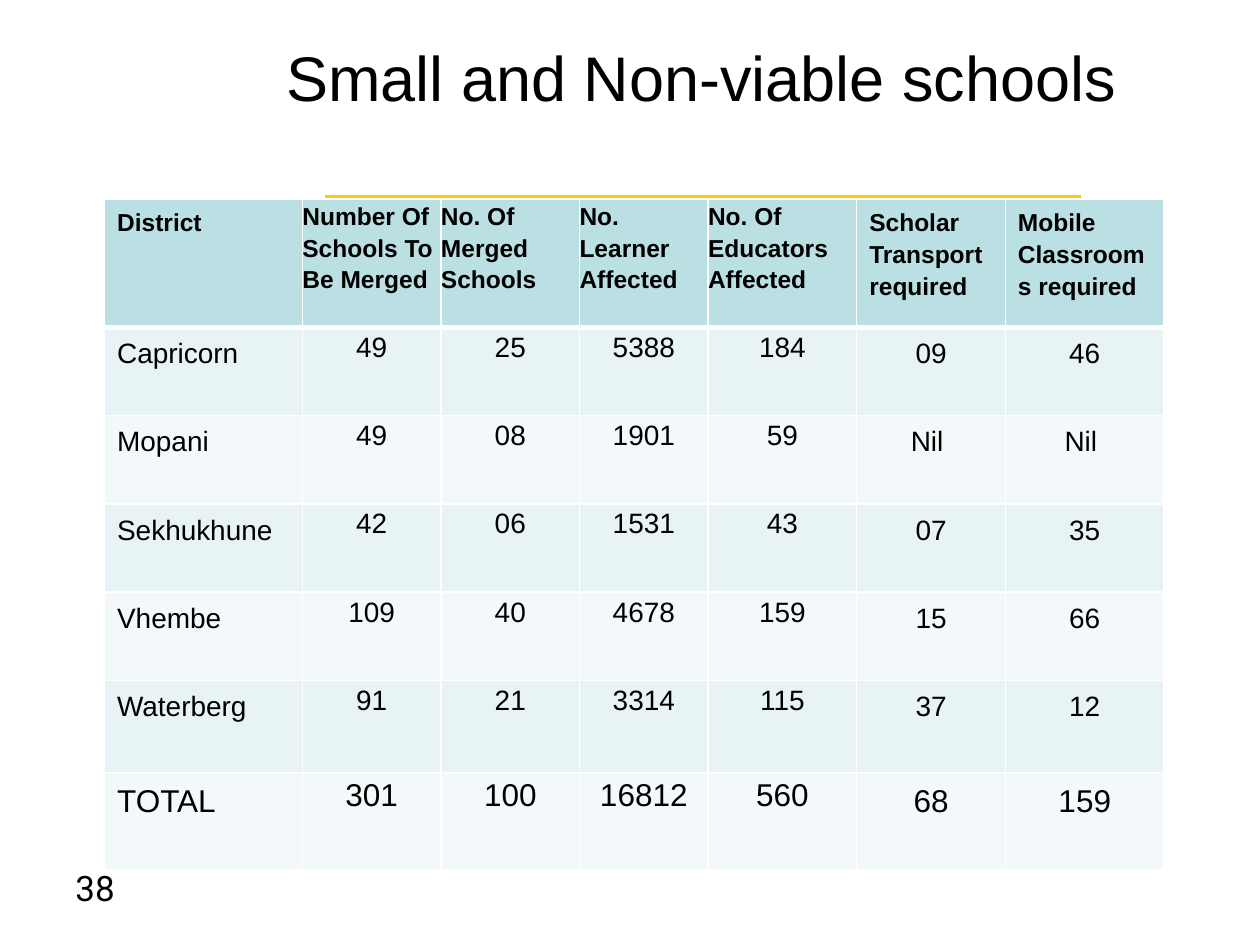
from lxml.etree import SubElement
from pptx import Presentation
from pptx.dml.color import RGBColor
from pptx.enum.shapes import MSO_CONNECTOR
from pptx.enum.text import MSO_ANCHOR, PP_ALIGN
from pptx.oxml.ns import qn
from pptx.util import Inches, Pt

BLACK = RGBColor(0x00, 0x00, 0x00)
WHITE = RGBColor(0xFF, 0xFF, 0xFF)
GOLD = RGBColor(0xFF, 0xCC, 0x00)
HEADER_TEAL = RGBColor(0xBB, 0xE0, 0xE3)
BAND_FILLS = (RGBColor(0xE7, 0xF3, 0xF4), RGBColor(0xF3, 0xF9, 0xFA))

COLUMN_WIDTHS = (1.57, 1.1, 1.1, 1.02, 1.18, 1.18, 1.26)
ROW_HEIGHTS = (1.02, 0.7, 0.7, 0.7, 0.7, 0.73, 0.77)
TIGHT_COLUMNS = range(1, 5)
ROWS = (
    ("District", "Number Of Schools To Be Merged", "No. Of Merged Schools",
     "No. Learner Affected", "No. Of Educators Affected",
     "Scholar Transport required", "Mobile\nClassrooms required"),
    ("Capricorn", "49", "25", "5388", "184", "09", "46"),
    ("Mopani", "49", "08", "1901", "59", "Nil ", "Nil "),
    ("Sekhukhune", "42", "06", "1531", "43", "07", "35"),
    ("Vhembe", "109", "40", "4678", "159", "15", "66"),
    ("Waterberg", "91", "21", "3314", "115", "37", "12"),
    ("TOTAL", "301", "100", "16812", "560", "68", "159"),
)


def style_font(font, size, name="Arial", bold=False):
    font.name = name
    font.size = Pt(size)
    font.bold = bold
    font.color.rgb = BLACK


def add_text(slide, text, left, top, width, height, size, name, align):
    box = slide.shapes.add_textbox(
        Inches(left), Inches(top), Inches(width), Inches(height))
    frame = box.text_frame
    frame.word_wrap = True
    frame.text = text
    para = frame.paragraphs[0]
    para.alignment = align
    style_font(para.runs[0].font, size, name)
    return box


def add_rule(slide, left, right, top):
    rule = slide.shapes.add_connector(
        MSO_CONNECTOR.STRAIGHT, Inches(left), Inches(top), Inches(right), Inches(top))
    rule.line.color.rgb = GOLD
    rule.line.width = Pt(4.5)
    SubElement(rule.element.spPr, qn("a:effectLst"))


def set_borders(cell, bottom_width, top_width):
    """Draw white borders; call before filling, since the fill must follow them."""
    properties = cell._tc.get_or_add_tcPr()
    widths = {"a:lnL": 1, "a:lnR": 1, "a:lnT": top_width, "a:lnB": bottom_width}
    for tag, width in widths.items():
        line = SubElement(properties, qn(tag), w=str(Pt(width)))
        fill = SubElement(line, qn("a:solidFill"))
        SubElement(fill, qn("a:srgbClr"), val=str(WHITE))


def fill_cell(cell, text, row, column):
    header = row == 0
    set_borders(cell, 3 if header else 1, 3 if row == 1 else 1)
    cell.fill.solid()
    cell.fill.fore_color.rgb = HEADER_TEAL if header else BAND_FILLS[(row - 1) % 2]
    if column in TIGHT_COLUMNS:
        cell.margin_left = cell.margin_right = 0
        cell.margin_top = cell.margin_bottom = 0
    size = 14 if header else 18 if row == len(ROWS) - 1 else 16
    cell.text_frame.text = text
    for para in cell.text_frame.paragraphs:
        para.line_spacing = 1.15
        para.alignment = PP_ALIGN.LEFT if header or column == 0 else PP_ALIGN.CENTER
        for span in para.runs:
            style_font(span.font, size, bold=header)


def add_school_table(slide, left, top):
    frame = slide.shapes.add_table(
        len(ROWS), len(COLUMN_WIDTHS), Inches(left), Inches(top),
        Inches(sum(COLUMN_WIDTHS)), Inches(sum(ROW_HEIGHTS)))
    table = frame.table
    for column, width in zip(table.columns, COLUMN_WIDTHS):
        column.width = Inches(width)
    for row, height in zip(table.rows, ROW_HEIGHTS):
        row.height = Inches(height)
    for row, texts in enumerate(ROWS):
        for column, text in enumerate(texts):
            fill_cell(table.cell(row, column), text, row, column)


def main():
    deck = Presentation()
    deck.slide_width = Inches(10)
    deck.slide_height = Inches(7.5)
    page = deck.slides.add_slide(deck.slide_layouts[6])
    add_rule(page, 2.58, 8.58, 1.58)
    title = add_text(page, "Small and Non-viable schools",
                     1.4, 0.28, 8.33, 0.66, 36, "Arial", PP_ALIGN.CENTER)
    title.text_frame.vertical_anchor = MSO_ANCHOR.MIDDLE
    add_text(page, "38", 0.5, 6.83, 2.33, 0.52, 20, "Roboto", PP_ALIGN.LEFT)
    add_school_table(page, 0.83, 1.58)
    deck.save("out.pptx")


if __name__ == "__main__":
    main()
